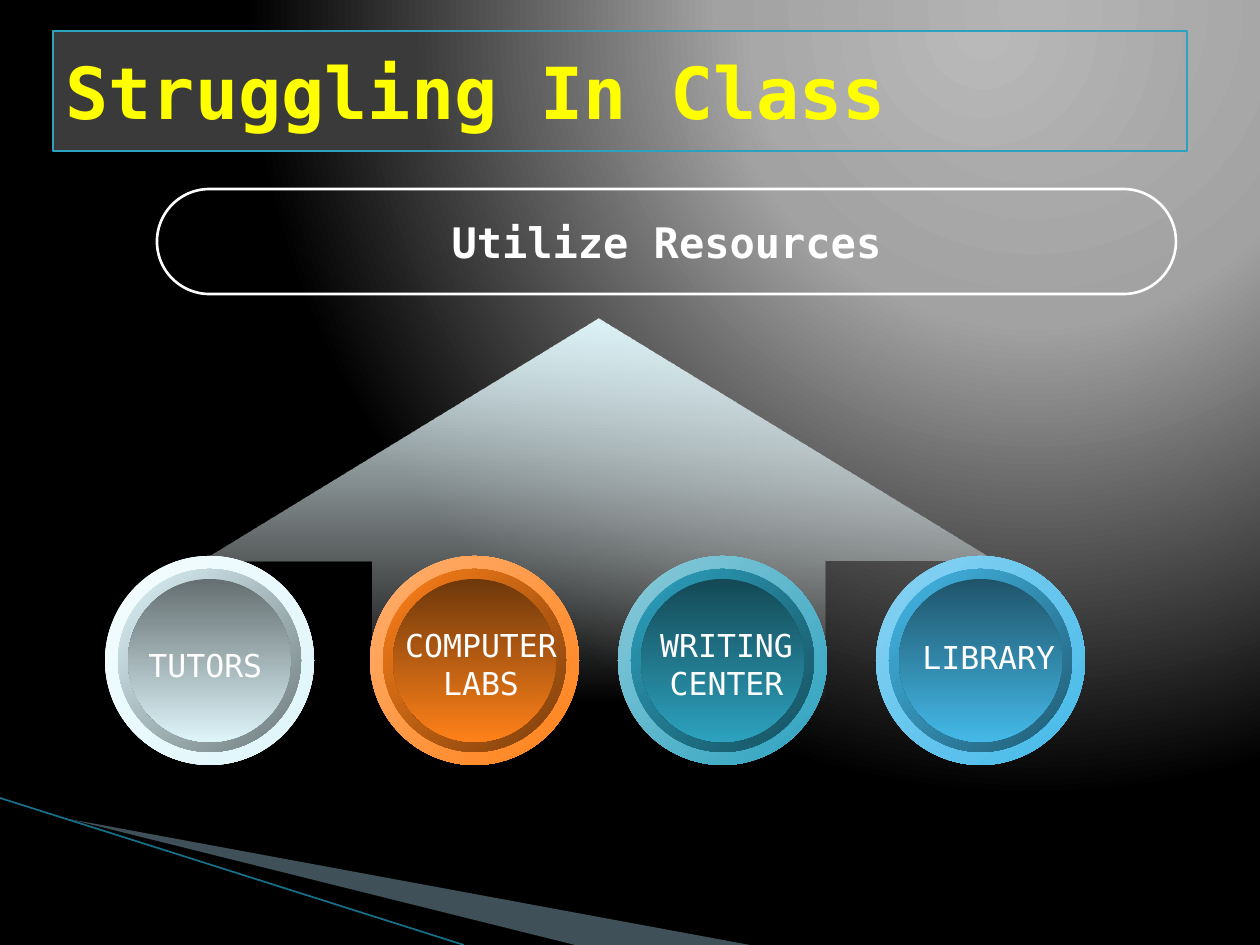
from lxml import etree
from pptx import Presentation
from pptx.dml.color import RGBColor as RGB
from pptx.enum.shapes import MSO_CONNECTOR as CONN, MSO_SHAPE as SHP
from pptx.enum.text import MSO_ANCHOR as ANC, MSO_AUTO_SIZE as AUTO, PP_ALIGN as AL
from pptx.oxml.ns import qn
from pptx.util import Emu, Pt

SCALE = 914400 / 126
FONT = "DejaVu Sans Mono"
C = {
    "yellow": "FFFF00", "white": "FFFFFF", "teal": "2DA2BF",
    "wedge": "3F5058", "streak": "17718A", "ice": "DEF5FA", "mist": "F5FCFD",
}
SPOTLIGHT = {"l": 65, "t": 0, "r": 0, "b": 98}


def gradient(parent, stops, angle=None):
    solid = parent.find(qn("a:solidFill"))
    grad = etree.Element(qn("a:gradFill"), rotWithShape="1")
    gs_lst = etree.SubElement(grad, qn("a:gsLst"))
    for pos, color, alpha in stops:
        gs = etree.SubElement(gs_lst, qn("a:gs"), pos=str(pos * 1000))
        clr = etree.SubElement(gs, qn("a:srgbClr"), val=color)
        if alpha < 100:
            etree.SubElement(clr, qn("a:alpha"), val=str(alpha * 1000))
    if angle is None:
        path = etree.SubElement(grad, qn("a:path"), path="circle")
        etree.SubElement(path, qn("a:fillToRect"),
                         {k: str(v * 1000) for k, v in SPOTLIGHT.items()})
    else:
        etree.SubElement(grad, qn("a:lin"), ang=str(angle * 60000), scaled="0")
    parent.replace(solid, grad)


def write(sp, lines, size, color, align, bold=False):
    tf = sp.text_frame
    for i, line in enumerate(lines):
        p = tf.paragraphs[0] if i == 0 else tf.add_paragraph()
        p.alignment = align
        r = p.add_run()
        r.text = line
        fmt = {"name": FONT, "size": Pt(size), "bold": bold}
        for key, value in fmt.items():
            setattr(r.font, key, value)
        r.font.color.rgb = RGB.from_string(C[color])
    return tf


prs = Presentation()
prs.slide_width, prs.slide_height = (Emu(round(v * SCALE)) for v in (1260, 945))
s = prs.slides.add_slide(prs.slide_layouts[5])
s.background.fill.solid()
gradient(s.element.find(".//" + qn("p:bgPr")),
         [(0, "B4B4B4", 100), (40, "A2A2A2", 100), (100, "000000", 100)])

fb = s.shapes.build_freeform(69, 819, scale=SCALE)
fb.add_line_segments([(750, 945), (575, 945)])
sp = fb.convert_to_shape()
sp.shadow.inherit = False
sp.fill.solid()
sp.fill.fore_color.rgb = RGB.from_string(C["wedge"])
sp.line.fill.background()

cx = s.shapes.add_connector(CONN.STRAIGHT, *(round(v * SCALE) for v in (0, 798, 464, 945)))
cx.line.color.rgb = RGB.from_string(C["streak"])
cx.line.width = Pt(0.95)
etree.SubElement(cx.element.spPr, qn("a:effectLst"))

title = s.shapes.title
for key, px in {"left": 53, "top": 31, "width": 1134, "height": 120}.items():
    setattr(title, key, round(px * SCALE))
title.fill.solid()
gradient(title.element.spPr,
         [(0, "B9B9B9", 100), (40, "A8A8A8", 100), (100, "3A3A3A", 100)])
title.line.color.rgb = RGB.from_string(C["teal"])
title.line.width = Pt(0.75)
tf = write(title, ["Struggling In Class"], 41, "yellow", AL.LEFT, True)
tf.vertical_anchor = ANC.MIDDLE
tf.auto_size = AUTO.NONE

arrow = s.shapes.add_shape(SHP.UP_ARROW, *(round(v * SCALE) for v in (202, 319, 794, 384)))
arrow.adjustments[0], arrow.adjustments[1] = 0.57, 0.63
arrow.shadow.inherit = False
arrow.line.fill.background()
arrow.fill.solid()
gradient(arrow.element.spPr, [(0, C["ice"], 100), (100, C["mist"], 0)], 90)

DISCS = [
    (105, "F4FDFF", "DEF5FA", "6E7A7D", "656F71"),
    (370, "FFB070", "FF8119", "7A3D0C", "6E380B"),
    (618, "8CCBDA", "2DA2BF", "154F5E", "144955"),
    (876, "8AD3F4", "44B9E8", "205A72", "1F546A"),
]
for left, light, base, dark, deep in DISCS:
    disc = s.shapes.add_group_shape()
    rings = [(0, light, base, 45), (13, base, dark, 45), (23, deep, base, 90)]
    for inset, start, end, angle in rings:
        side = 209 - 2 * inset
        box = (left + inset, 556 + inset, side, side)
        sp = disc.shapes.add_shape(SHP.OVAL, *(round(v * SCALE) for v in box))
        sp.shadow.inherit = False
        sp.line.fill.background()
        sp.fill.solid()
        gradient(sp.element.spPr, [(0, start, 100), (100, end, 100)], angle)

pill = s.shapes.add_shape(SHP.ROUNDED_RECTANGLE,
                          *(round(v * SCALE) for v in (157, 189, 1019, 105)))
pill.adjustments[0] = 0.5
pill.shadow.inherit = False
pill.fill.background()
pill.line.color.rgb = RGB.from_string(C["white"])
pill.line.width = Pt(1.5)
tf = write(pill, ["Utilize Resources"], 24, "white", AL.CENTER, True)
tf.vertical_anchor = ANC.MIDDLE
tf.word_wrap = False

LABELS = [
    (136, 640, 156, 50, ["TUTORS"], AL.LEFT),
    (377, 620, 208, 89, ["COMPUTER", "LABS"], AL.CENTER),
    (640, 620, 173, 89, ["WRITING", "CENTER"], AL.CENTER),
    (910, 632, 171, 50, ["LIBRARY"], AL.LEFT),
]
for *box, lines, align in LABELS:
    tb = s.shapes.add_textbox(*(round(v * SCALE) for v in box))
    tf = write(tb, lines, 18, "white", align)
    tf.word_wrap = False
    tf.auto_size = AUTO.SHAPE_TO_FIT_TEXT

prs.save("out.pptx")
